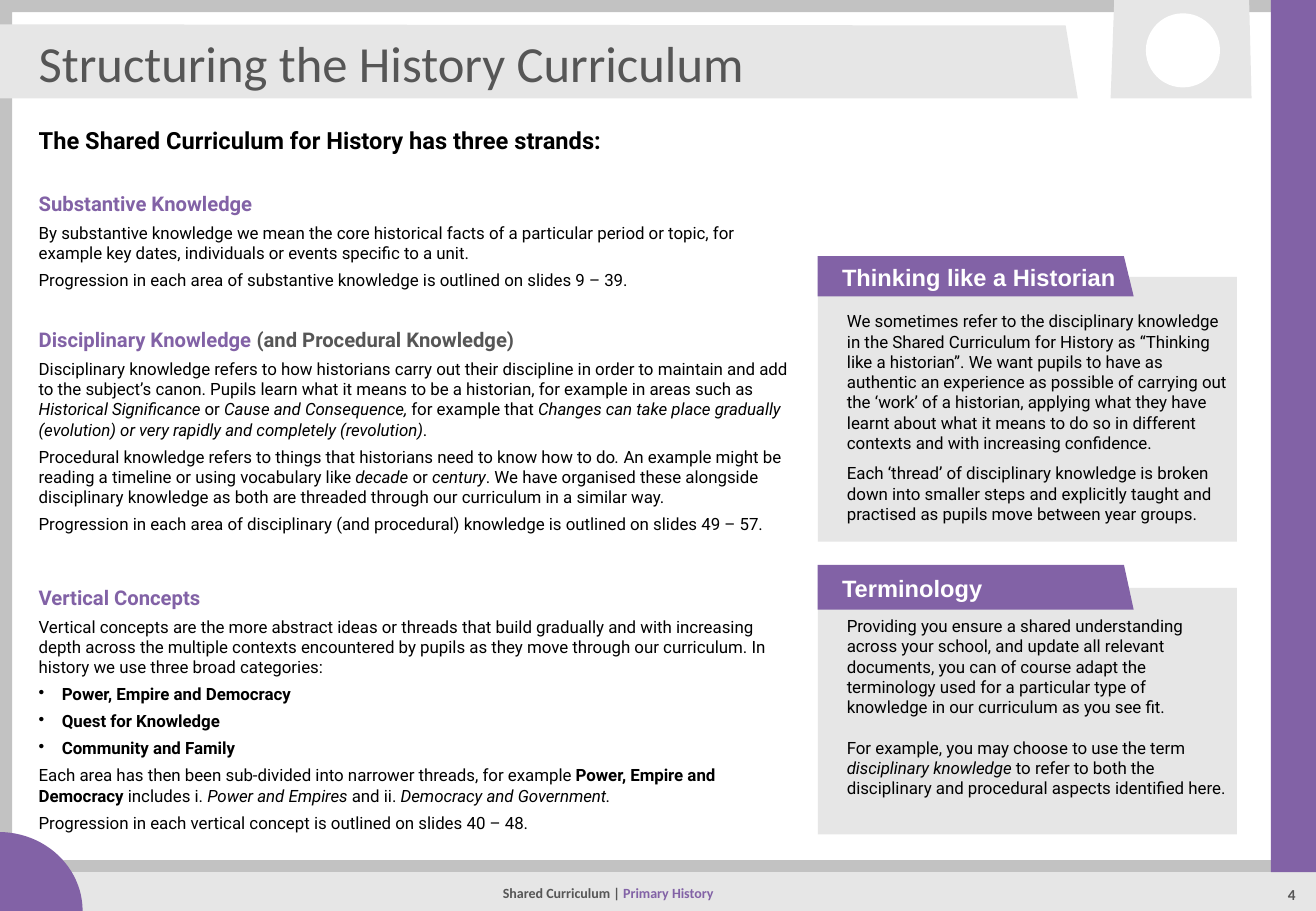
from dataclasses import dataclass

from lxml import etree
from pptx import Presentation
from pptx.dml.color import RGBColor
from pptx.enum.shapes import MSO_CONNECTOR, MSO_SHAPE
from pptx.enum.text import MSO_ANCHOR, PP_ALIGN
from pptx.oxml.ns import qn
from pptx.util import Inches, Pt

RECT, OVAL, ARC = MSO_SHAPE.RECTANGLE, MSO_SHAPE.OVAL, MSO_SHAPE.ARC
STRAIGHT = MSO_CONNECTOR.STRAIGHT
TOP, MIDDLE = MSO_ANCHOR.TOP, MSO_ANCHOR.MIDDLE
LEFT, CENTER = PP_ALIGN.LEFT, PP_ALIGN.CENTER

COLORS = {
    "purple": "8262A6", "silver": "C2C2C2", "pale": "E6E6E6",
    "slate": "565656", "black": "000000", "white": "FFFFFF",
}
WIDE, HIGH = 10.83, 7.5
INSET = (0.1, 0.05, 0.1, 0.05)


@dataclass
class Run:
    text: str
    bold: bool = False
    italic: bool = False
    color: str = ""


@dataclass
class Card:
    title: str
    top: float
    height: float
    tab_top: float
    tab_height: float


def ital(text: str) -> Run:
    return Run(text, italic=True)


def paint(shape, color: str):
    shape.shadow.inherit = False
    shape.fill.solid()
    shape.fill.fore_color.rgb = RGBColor.from_string(COLORS[color])
    shape.line.fill.background()
    return shape


def block(kind, left: float, top: float, width: float, height: float, color: str):
    return paint(slide.shapes.add_shape(
        kind, Inches(left), Inches(top), Inches(width), Inches(height)), color)


def outline(color: str, *loops: list):
    """Draw a filled outline; each loop is a list of points in inches."""
    pen = None
    for loop in loops:
        start, *rest = [(Inches(x), Inches(y)) for x, y in loop]
        if pen is None:
            pen = slide.shapes.build_freeform(*start)
        else:
            pen.move_to(*start)
        pen.add_line_segments(rest, close=True)
    return paint(pen.convert_to_shape(), color)


def setup(shape, inset: tuple = INSET, anchor=TOP):
    frame = shape.text_frame
    frame.word_wrap = True
    frame.vertical_anchor = anchor
    (frame.margin_left, frame.margin_top,
     frame.margin_right, frame.margin_bottom) = map(Inches, inset)
    return frame


def box(left: float, top: float, width: float, height: float, anchor=TOP):
    return setup(slide.shapes.add_textbox(
        Inches(left), Inches(top), Inches(width), Inches(height)), anchor=anchor)


def write(frame, *parts, size: float = 10, font: str = "Roboto",
          color: str = "black", bold: bool = False, align=LEFT,
          before: float = 0, after: float = 0, line=None, bullet: bool = False):
    """Add one paragraph made of strings and runs."""
    par = frame.paragraphs[0]
    if par.runs:
        par = frame.add_paragraph()
    if bullet:
        props = par._p.get_or_add_pPr()
        props.set("marL", str(Inches(0.19)))
        props.set("indent", str(-Inches(0.19)))
        etree.SubElement(props, qn("a:buChar")).set("char", "•")
    par.alignment = align
    par.space_before, par.space_after = Pt(before), Pt(after)
    if line:
        par.line_spacing = line
    for part in parts:
        item = part if isinstance(part, Run) else Run(part)
        run = par.add_run()
        run.text = item.text
        run.font.name, run.font.size = font, Pt(size)
        run.font.bold = bold or item.bold
        run.font.italic = item.italic
        run.font.color.rgb = RGBColor.from_string(COLORS[item.color or color])


def head(frame, *parts, before: float = 0):
    write(frame, *parts, size=12, color="purple", bold=True, before=before, after=4)


def draw_card(card: Card):
    left, tip, low = 6.73, 9.25, card.tab_top + card.tab_height
    panel = block(RECT, left, card.top, 3.45, card.height, "pale")
    tab = outline("purple", [(left, card.tab_top), (tip, card.tab_top),
                             (tip + 0.08, low), (left, low)])
    write(setup(tab, (0.2, 0.05, 0.1, 0.05), MIDDLE), card.title,
          size=14, font="Arial", color="white", bold=True, line=Pt(18))
    return panel


deck = Presentation()
deck.slide_width, deck.slide_height = Inches(WIDE), Inches(HIGH)
slide = deck.slides.add_slide(deck.slide_layouts[6])

# Frame and footer
outline("silver", [(0, 0), (WIDE, 0), (WIDE, HIGH), (0, HIGH)],
        [(0.1, 0.1), (0.1, 7.41), (10.73, 7.41), (10.73, 0.1)])
block(RECT, 0.32, 7.18, WIDE - 0.32, HIGH - 7.18, "pale")
rule = slide.shapes.add_connector(
    STRAIGHT, Inches(0.05), Inches(7.13), Inches(WIDE), Inches(7.13))
rule.line.width = Pt(7)
rule.line.color.rgb = RGBColor.from_string(COLORS["silver"])
etree.SubElement(rule._element.spPr, qn("a:effectLst"))
block(ARC, -0.7, 6.85, 1.38, 1.3, "purple")
write(box(2.05, 7.21, 5.91, 0.3, MIDDLE), "Shared Curriculum | ",
      Run("Primary History", color="purple"), size=8.3, font="Calibri",
      color="slate", bold=True, align=CENTER, line=0.9)

# Badge, title band and side strip
outline("pale", [(9.14, 0.81), (10.3, 0.81), (10.28, 0), (9.17, 0)])
block(OVAL, 9.43, 0.11, 0.61, 0.61, "white")
outline("pale", [(0, 0.2), (0, 0.81), (8.87, 0.81), (8.77, 0.21)])
block(RECT, 10.46, 0, WIDE - 10.46, 7.18, "purple")
write(box(10.31, 7.21, 0.64, 0.28), "4", size=9, font="Calibri",
      color="slate", bold=True, align=CENTER, line=1.2)
write(box(0.22, 0.26, 8.42, 0.5, MIDDLE), "Structuring the History Curriculum",
      size=30, font="Calibri", color="slate")

# Substantive and disciplinary strands
main = box(0.22, 0.99, 6.36, 3.5)
write(main, "The Shared Curriculum for History has three strands:",
      size=14, bold=True, after=4)
head(main, "Substantive Knowledge", before=18)
write(main, "By substantive knowledge we mean the core historical facts of a particular period or topic, for example key dates, individuals or events specific to a unit.", after=4)
write(main, "Progression in each area of substantive knowledge is outlined on slides 9 – 39.", after=4)
head(main, "Disciplinary Knowledge ", Run("(and Procedural Knowledge)", color="slate"), before=18)
write(main, "Disciplinary knowledge refers to how historians carry out their discipline in order to maintain and add to the subject’s canon. Pupils learn what it means to be a historian, for example in areas such as ",
      ital("Historical Significance "), "or ", ital("Cause and Consequence, "), "for example that ",
      ital("Changes can take place gradually (evolution) or very rapidly and completely (revolution)"), ".", after=4)
write(main, "Procedural knowledge refers to things that historians need to know how to do", ital(". "),
      "An example might be reading a timeline or using vocabulary like ", ital("decade"), " or ", ital("century"),
      ". We have organised these alongside disciplinary knowledge as both are threaded through our curriculum in a similar way.", after=4)
write(main, "Progression in each area of disciplinary (and procedural) knowledge is outlined on slides 49 – 57.", after=4)

# Vertical concepts
lower = box(0.22, 4.77, 6.36, 2.15)
head(lower, "Vertical Concepts")
write(lower, "Vertical concepts are the more abstract ideas or threads that build gradually and with increasing depth across the multiple contexts encountered by pupils as they move through our curriculum. In history we use three broad categories:", after=4)
for theme in ("Power, Empire and Democracy", "Quest for Knowledge", "Community and Family"):
    write(lower, theme, bold=True, after=4, bullet=True)
write(lower, "Each area has then been sub-divided into narrower threads, for example ",
      Run("Power, Empire and Democracy ", bold=True), "includes i. ", ital("Power and Empires "),
      "and ii. ", ital("Democracy and Government."), after=4)
write(lower, "Progression in each vertical concept is outlined on slides 40 – 48.", after=4)

# Side cards
panel = draw_card(Card("Thinking like a Historian", 2.28, 2.18, 2.11, 0.33))
think = setup(panel, (0.24, 0.28, 0.08, 0.08))
write(think, "We sometimes refer to the disciplinary knowledge in the Shared Curriculum for History as “Thinking like a historian”. We want pupils to have as authentic an experience as possible of carrying out the ‘work’ of a historian, applying what they have learnt about what it means to do so in different contexts and with increasing confidence.", after=6)
write(think, "Each ‘thread’ of disciplinary knowledge is broken down into smaller steps and explicitly taught and practised as pupils move between year groups.", after=6)

draw_card(Card("Terminology", 4.84, 2.03, 4.65, 0.37))
terms = box(6.87, 5.02, 3.32, 1.78)
write(terms, "Providing you ensure a shared understanding across your school, and update all relevant documents, you can of course adapt the terminology used for a particular type of knowledge in our curriculum as you see fit.")
write(terms, "For example, you may choose to use the term ", ital("disciplinary knowledge"),
      " to refer to both the disciplinary and procedural aspects identified here.", before=12)

deck.save("out.pptx")
